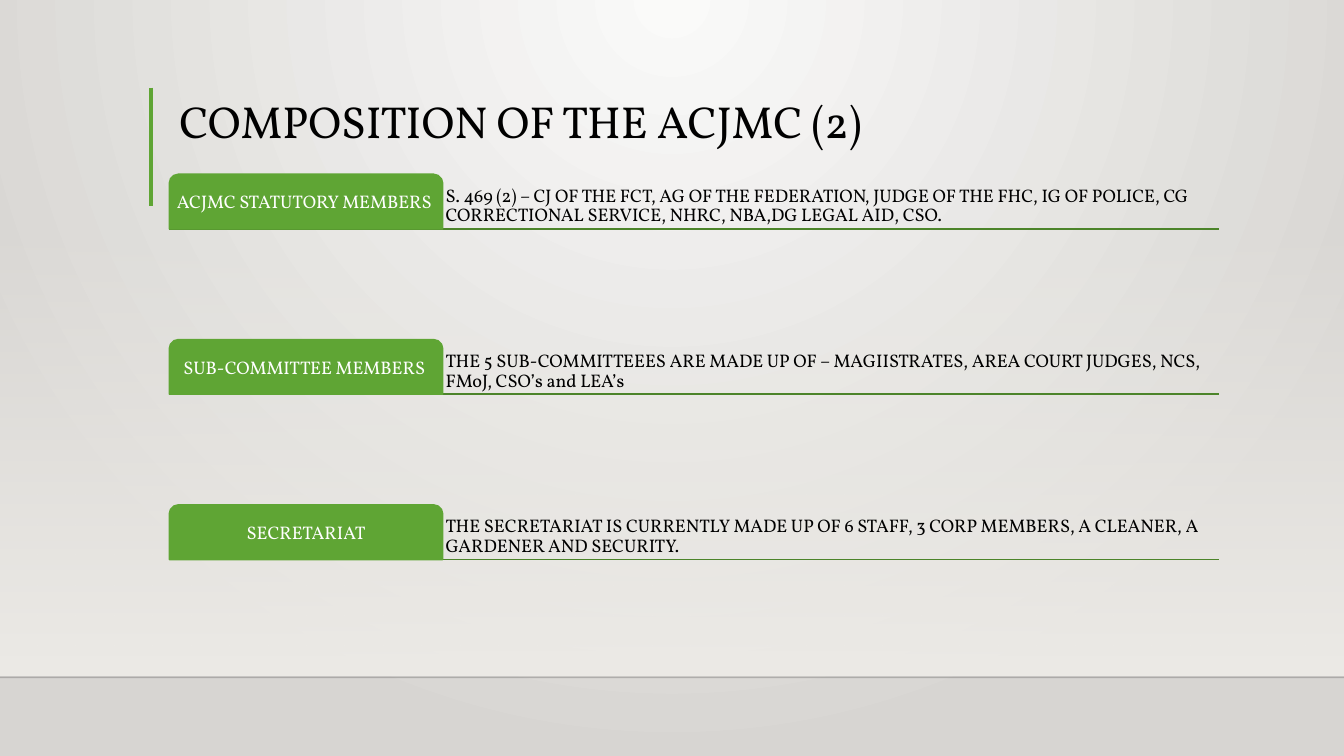
from pptx import Presentation
from pptx.dml.color import RGBColor
from pptx.enum import shapes, text
from pptx.oxml.ns import qn
from pptx.util import Inches, Pt
from lxml import etree

FONT = "Vollkorn"
BLACK = RGBColor(0, 0, 0)
WHITE = RGBColor(0xFF, 0xFF, 0xFF)
GREEN = RGBColor(0x5F, 0xA5, 0x34)
DARK_GREEN = RGBColor(0x4C, 0x84, 0x2A)
LIGHT_GREY = RGBColor(0xFA, 0xFA, 0xF9)
MID_GREY = RGBColor(0xD7, 0xD5, 0xD2)
WARM_GREY = RGBColor(0xED, 0xEB, 0xE7)

LEFT, RIGHT = 1.68, 12.09
TAB_WIDTH, ROW_HEIGHT = 2.71, 0.54
FIRST_ROW, ROW_STEP = 1.73, 1.64

MEMBERS = [
    ("ACJMC STATUTORY MEMBERS ",
     "S. 469 (2) – CJ OF THE FCT, AG OF THE FEDERATION, JUDGE OF THE FHC, "
     "IG OF POLICE, CG CORRECTIONAL SERVICE, NHRC, NBA,DG LEGAL AID, CSO."),
    ("SUB-COMMITTEE MEMBERS ",
     "THE 5 SUB-COMMITTEEES ARE MADE UP OF – MAGIISTRATES, AREA COURT JUDGES, "
     "NCS, FMoJ, CSO’s and LEA’s"),
    ("SECRETARIAT",
     "THE SECRETARIAT IS CURRENTLY MADE UP OF 6 STAFF, 3 CORP MEMBERS, "
     "A CLEANER, A GARDENER AND SECURITY."),
]


def set_alpha(element, percent):
    """Make the first RGB colour inside the element partly transparent."""
    color = next(element.iter(qn("a:srgbClr")))
    etree.SubElement(color, qn("a:alpha")).set("val", str(percent * 1000))


def set_gradient(fill, first, last):
    fill.gradient()
    for stop, color in zip(fill.gradient_stops, (first, last)):
        stop.color.rgb = color


def add_background(slide):
    """Radial gradient that spreads from the middle of the top edge."""
    set_gradient(slide.background.fill, LIGHT_GREY, MID_GREY)
    gradient = next(slide.element.iter(qn("a:gradFill")))
    gradient.remove(gradient.find(qn("a:lin")))
    radial = etree.SubElement(gradient, qn("a:path"), path="circle")
    etree.SubElement(radial, qn("a:fillToRect"),
                     l="43000", t="0", r="43000", b="100000")


def add_haze(slide):
    haze = slide.shapes.add_shape(shapes.MSO_SHAPE.RECTANGLE, 0, Inches(2.2),
                                  Inches(13.33), Inches(4.5))
    haze.shadow.inherit = False
    haze.line.fill.background()
    set_gradient(haze.fill, WARM_GREY, WARM_GREY)
    haze.fill.gradient_angle = 270
    set_alpha(haze.element, 0)


def add_line(slide, x1, y1, x2, y2, color, width):
    line = slide.shapes.add_connector(
        shapes.MSO_CONNECTOR.STRAIGHT,
        Inches(x1), Inches(y1), Inches(x2), Inches(y2))
    line.line.color.rgb = color
    line.line.width = Pt(width)
    etree.SubElement(line.element.spPr, qn("a:effectLst"))
    return line


def write(shape, words, size, color, align, anchor):
    frame = shape.text_frame
    frame.word_wrap = True
    frame.auto_size = text.MSO_AUTO_SIZE.NONE
    frame.vertical_anchor = anchor
    paragraph = frame.paragraphs[0]
    paragraph.alignment = align
    paragraph.line_spacing = 0.9
    run = paragraph.add_run()
    run.text = words
    run.font.name = FONT
    run.font.size = Pt(size)
    run.font.color.rgb = color


def set_margins(shape, margin):
    frame = shape.text_frame
    frame.margin_left = frame.margin_right = Inches(margin)
    frame.margin_top = frame.margin_bottom = Inches(margin)


def add_title(slide, words):
    title = slide.shapes.title
    title.left, title.top = Inches(LEFT), Inches(0.88)
    title.width, title.height = Inches(RIGHT - LEFT), Inches(0.64)
    write(title, words, 32, BLACK, text.PP_ALIGN.LEFT, text.MSO_ANCHOR.BOTTOM)
    # Bring the title in front of the haze
    slide.shapes[-1].element.addnext(title.element)


def add_member_row(slide, top, label, details):
    bottom = top + ROW_HEIGHT
    add_line(slide, LEFT, bottom, RIGHT, bottom, DARK_GREEN, 1.25)

    details_left = LEFT + TAB_WIDTH
    box = slide.shapes.add_textbox(Inches(details_left), Inches(top),
                                   Inches(RIGHT - details_left), Inches(ROW_HEIGHT))
    set_margins(box, 0.03)
    write(box, details, 13, BLACK, text.PP_ALIGN.LEFT, text.MSO_ANCHOR.BOTTOM)

    tab = slide.shapes.add_shape(shapes.MSO_SHAPE.ROUND_2_SAME_RECTANGLE,
                                 Inches(LEFT), Inches(top),
                                 Inches(TAB_WIDTH), Inches(ROW_HEIGHT))
    tab.shadow.inherit = False
    tab.fill.solid()
    tab.fill.fore_color.rgb = GREEN
    tab.line.color.rgb = GREEN
    tab.line.width = Pt(1.25)
    set_margins(tab, 0.03)
    write(tab, label, 13, WHITE, text.PP_ALIGN.CENTER, text.MSO_ANCHOR.MIDDLE)


def main():
    presentation = Presentation()
    presentation.slide_width = Inches(13.33)
    presentation.slide_height = Inches(7.5)
    slide = presentation.slides.add_slide(presentation.slide_layouts[5])

    add_background(slide)
    add_haze(slide)
    floor = add_line(slide, 0, 6.72, 13.33, 6.72, BLACK, 1)
    set_alpha(floor.element, 20)
    add_line(slide, 1.5, 0.87, 1.5, 2.04, GREEN, 3)
    add_title(slide, "COMPOSITION OF THE ACJMC (2)")
    for index, (label, details) in enumerate(MEMBERS):
        add_member_row(slide, FIRST_ROW + index * ROW_STEP, label, details)

    presentation.save("out.pptx")


if __name__ == "__main__":
    main()
